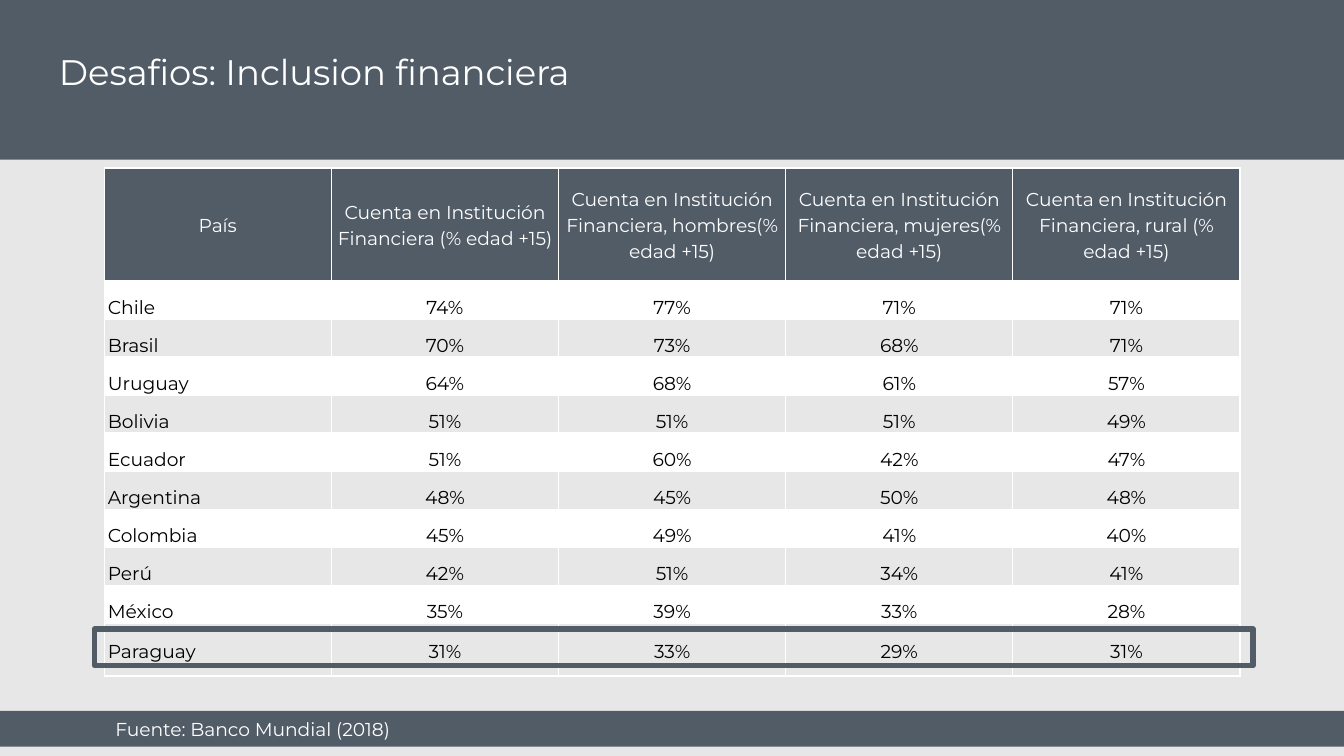
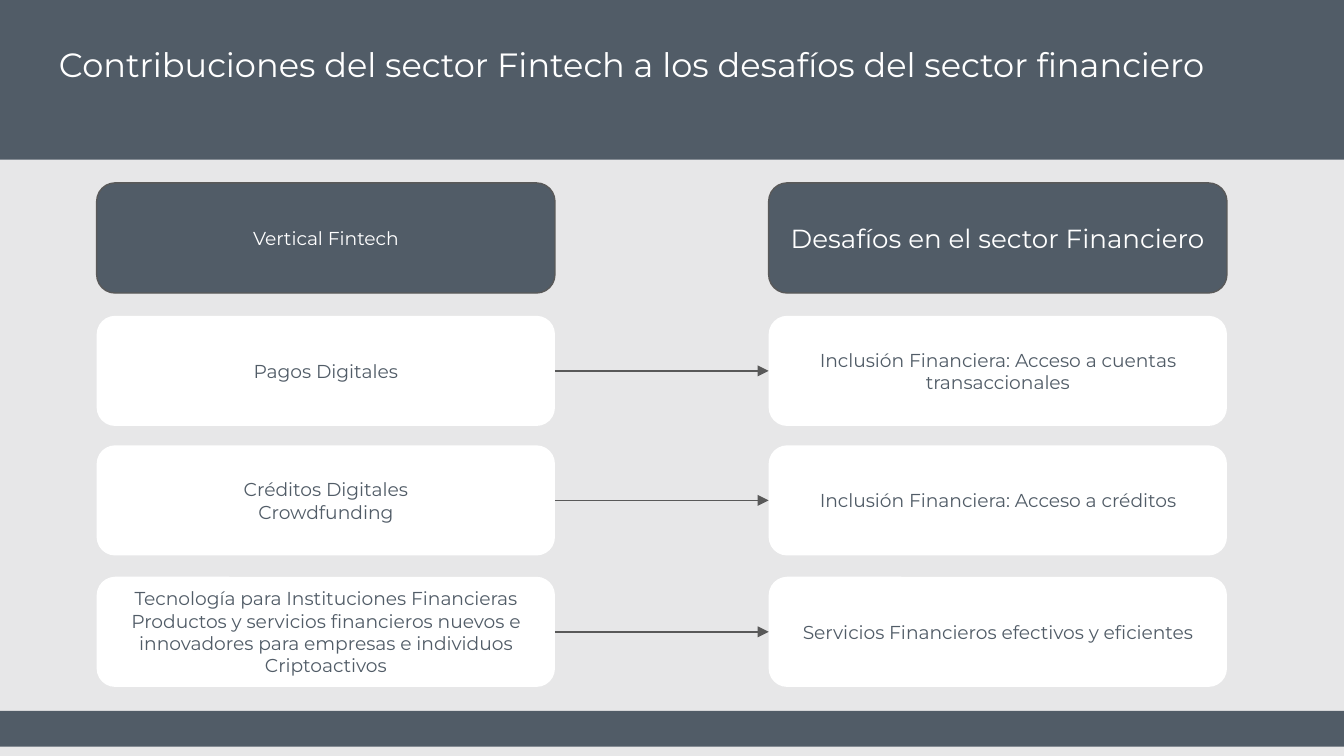
from lxml.etree import SubElement
from pptx import Presentation
from pptx.dml.color import RGBColor
from pptx.enum.shapes import MSO_CONNECTOR, MSO_SHAPE
from pptx.enum.text import MSO_ANCHOR, PP_ALIGN
from pptx.oxml import parse_xml
from pptx.oxml.ns import nsdecls, qn
from pptx.util import Pt

SLATE = RGBColor(0x51, 0x5C, 0x67)
PALE = RGBColor(0xE7, 0xE7, 0xE8)
GREY = RGBColor(0x59, 0x59, 0x59)
WHITE = RGBColor(0xFF, 0xFF, 0xFF)
BLACK = RGBColor(0x00, 0x00, 0x00)
FONT = "Montserrat"


def write(frame, text, size, colour, align=PP_ALIGN.LEFT, spacing=None, inset=7.2):
    """Fill a text frame or table cell margin-to-margin; each line is a paragraph."""
    frame.margin_left = frame.margin_right = Pt(inset)
    frame.margin_top = frame.margin_bottom = Pt(inset)
    frame.word_wrap = True
    frame.text = text
    for para in frame.paragraphs:
        para.alignment = align
        para.line_spacing = spacing
        for span in para.runs:
            span.font.name = FONT
            span.font.size = Pt(size)
            span.font.color.rgb = colour


def add_box(page, kind, left, top, width, height, fill=None, line=None, weight=0.75):
    box = page.shapes.add_shape(kind, Pt(left), Pt(top), Pt(width), Pt(height))
    box.shadow.inherit = False
    if fill is None:
        box.fill.background()
    else:
        box.fill.solid()
        box.fill.fore_color.rgb = fill
    if line is None:
        box.line.fill.background()
    else:
        box.line.color.rgb = line
        box.line.width = Pt(weight)
    return box


deck = Presentation()
deck.slide_width, deck.slide_height = Pt(720), Pt(405)

# Shared background, bands and title
titles = [
    ("Desafios: Inclusion financiera", 19, 19.4, 41),
    ("Contribuciones del sector Fintech a los desafíos del sector financiero", 18, 16.5, 36),
]
pages = []
for title, size, top, height in titles:
    page = deck.slides.add_slide(deck.slide_layouts[6])
    page.background.fill.solid()
    page.background.fill.fore_color.rgb = PALE
    add_box(page, MSO_SHAPE.RECTANGLE, 0, 380.8, 720, 19.2, SLATE)
    add_box(page, MSO_SHAPE.RECTANGLE, 0, -5, 720, 90.5, SLATE)
    heading = page.shapes.add_textbox(Pt(24.5), Pt(top), Pt(671), Pt(height))
    write(heading.text_frame, title, size, WHITE)
    pages.append(page)
inclusion_page, fintech_page = pages

# Slide 1: financial inclusion table
source = inclusion_page.shapes.add_textbox(Pt(54.7), Pt(375.8), Pt(464.4), Pt(19.4))
write(source.text_frame, "Fuente: Banco Mundial (2018)", 10, WHITE, spacing=1.15)
source.text_frame.paragraphs[0].space_after = Pt(16)

account = "Cuenta en Institución Financiera"
rows = [
    ("País", f"{account} (% edad +15)", f"{account}, hombres(% edad +15)",
     f"{account}, mujeres(% edad +15)", f"{account}, rural (% edad +15)"),
    ("Chile", 74, 77, 71, 71),
    ("Brasil", 70, 73, 68, 71),
    ("Uruguay", 64, 68, 61, 57),
    ("Bolivia", 51, 51, 51, 49),
    ("Ecuador", 51, 60, 42, 47),
    ("Argentina", 48, 45, 50, 48),
    ("Colombia", 45, 49, 41, 40),
    ("Perú", 42, 51, 34, 41),
    ("México", 35, 39, 33, 28),
    ("Paraguay", 31, 33, 29, 31),
]
last = len(rows) - 1
heights = [60.5] + [20.4] * (last - 1) + [27]
table = inclusion_page.shapes.add_table(
    len(rows), 5, Pt(55.8), Pt(90), Pt(608.5), Pt(sum(heights))).table
table.horz_banding = False
for column in table.columns:
    column.width = Pt(121.7)

for r, (row, height) in enumerate(zip(rows, heights)):
    table.rows[r].height = Pt(height)
    for c, value in enumerate(row):
        cell = table.cell(r, c)
        text = f"{value}%" if isinstance(value, int) else value
        align = PP_ALIGN.LEFT if r and c == 0 else PP_ALIGN.CENTER
        write(cell.text_frame, text, 10, BLACK if r else WHITE, align, 1.15)
        cell.margin_left = cell.margin_right = Pt(2)
        cell.margin_top = cell.margin_bottom = Pt(7.2 if r == last else 0)
        cell.vertical_anchor = MSO_ANCHOR.BOTTOM if r else MSO_ANCHOR.MIDDLE
        properties = cell._tc.get_or_add_tcPr()
        for side in ("L", "R", "T", "B"):
            border = SubElement(properties, qn(f"a:ln{side}"), w=str(Pt(0.75)))
            border.append(parse_xml(
                f'<a:solidFill {nsdecls("a")}><a:srgbClr val="{WHITE}"/></a:solidFill>'))
        if r and r % 2 == 0:
            cell.fill.background()
        else:
            cell.fill.solid()
            cell.fill.fore_color.rgb = WHITE if r else SLATE

add_box(inclusion_page, MSO_SHAPE.RECTANGLE, 50.6, 337, 620.6, 19.6, line=SLATE, weight=3)

# Slide 2: fintech verticals matched to challenges
LEFT, RIGHT, WIDTH, HEIGHT = 51.8, 411.8, 245.5, 59
pairs = [
    (98, "Vertical Fintech", "Desafíos en el sector Financiero"),
    (169.2, "Pagos Digitales", "Inclusión Financiera: Acceso a cuentas transaccionales"),
    (238.6, "Créditos Digitales\nCrowdfunding", "Inclusión Financiera: Acceso a créditos"),
    (309, "Tecnología para Instituciones Financieras\n"
          "Productos y servicios financieros nuevos e innovadores para empresas e individuos\n"
          "Criptoactivos", "Servicios Financieros efectivos y eficientes"),
]
for index, (top, vertical, challenge) in enumerate(pairs):
    is_header = index == 0
    for left, text in ((LEFT, vertical), (RIGHT, challenge)):
        box = add_box(fintech_page, MSO_SHAPE.ROUNDED_RECTANGLE, left, top, WIDTH, HEIGHT,
                      SLATE if is_header else WHITE, GREY if is_header else None)
        box.adjustments[0] = 0.167
        box.text_frame.vertical_anchor = MSO_ANCHOR.MIDDLE
        size = 14 if is_header and left == RIGHT else 10
        write(box.text_frame, text, size, WHITE if is_header else SLATE, PP_ALIGN.CENTER)
    if is_header:
        continue
    middle = Pt(top + HEIGHT / 2)
    arrow = fintech_page.shapes.add_connector(
        MSO_CONNECTOR.STRAIGHT, Pt(LEFT + WIDTH), middle, Pt(RIGHT), middle)
    arrow.line.color.rgb = GREY
    arrow.line.width = Pt(0.75)
    SubElement(arrow.line._get_or_add_ln(), qn("a:tailEnd"), type="triangle", w="med", len="med")
    SubElement(arrow._element.spPr, qn("a:effectLst"))

deck.save("out.pptx")
